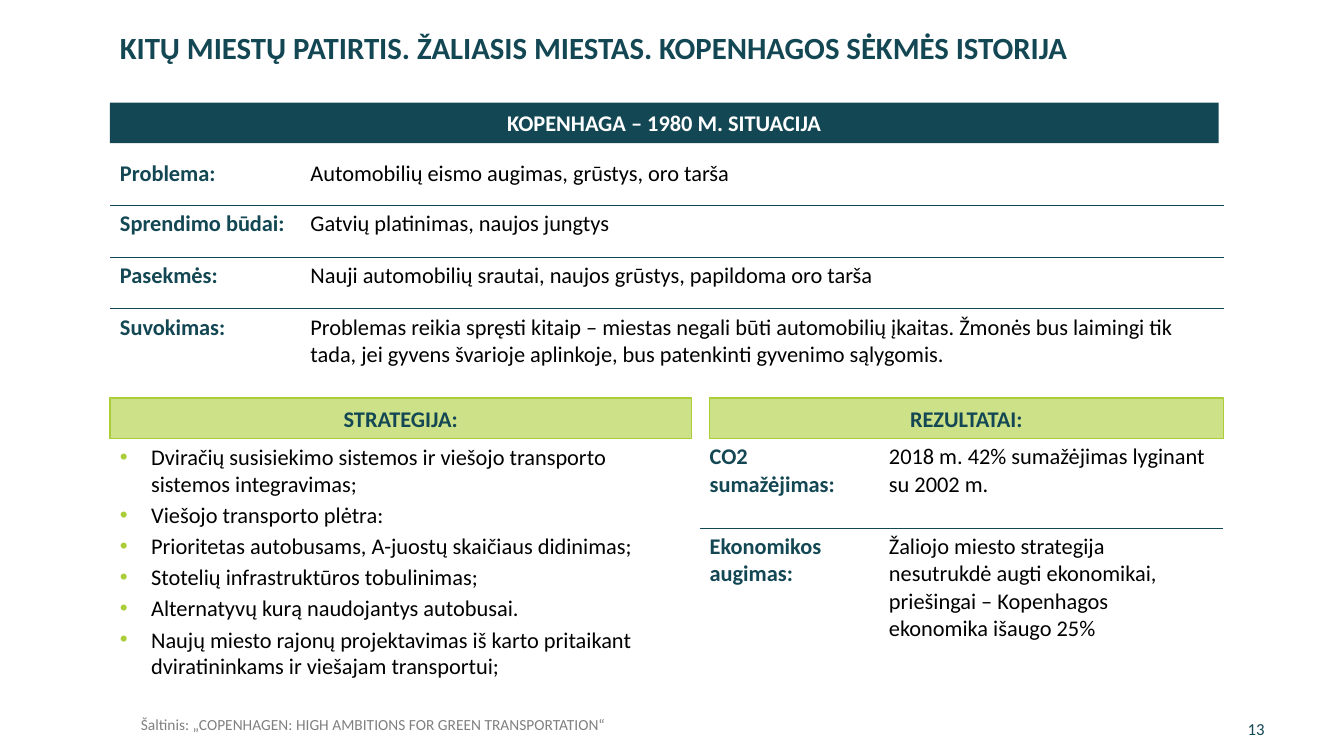
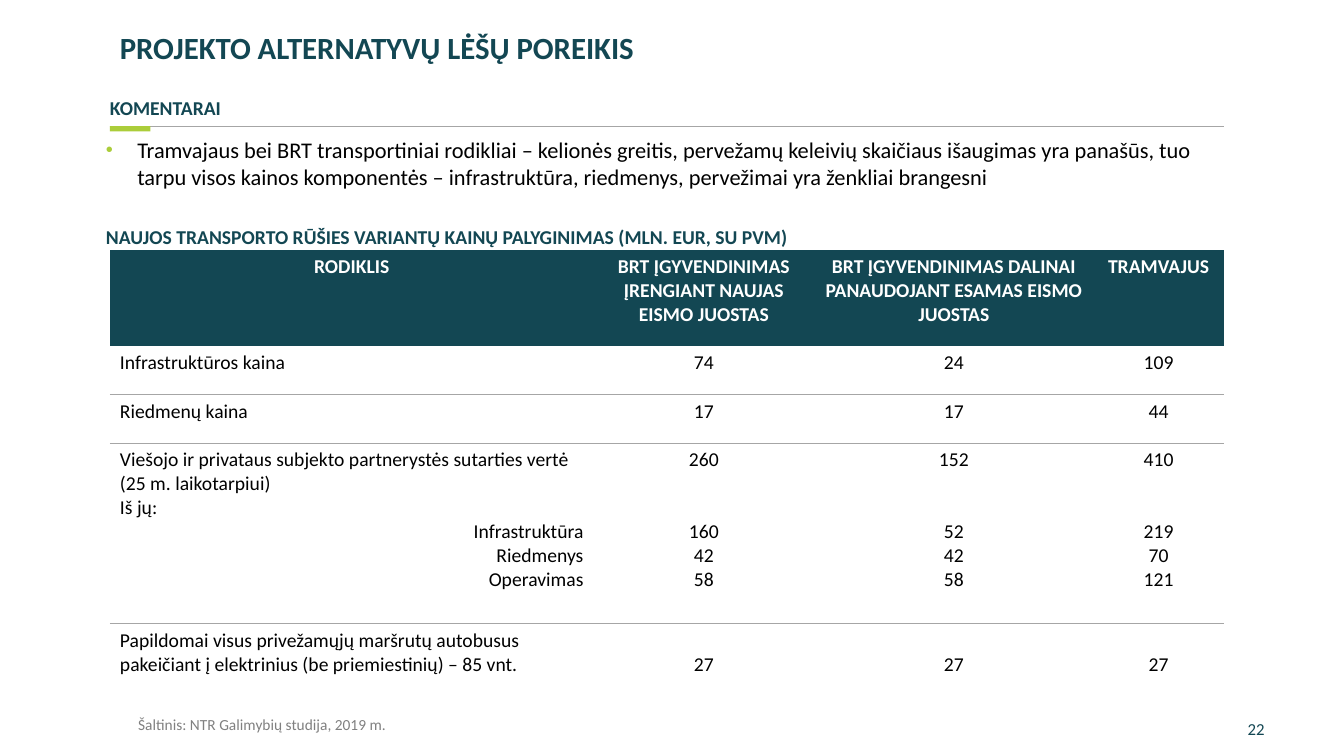
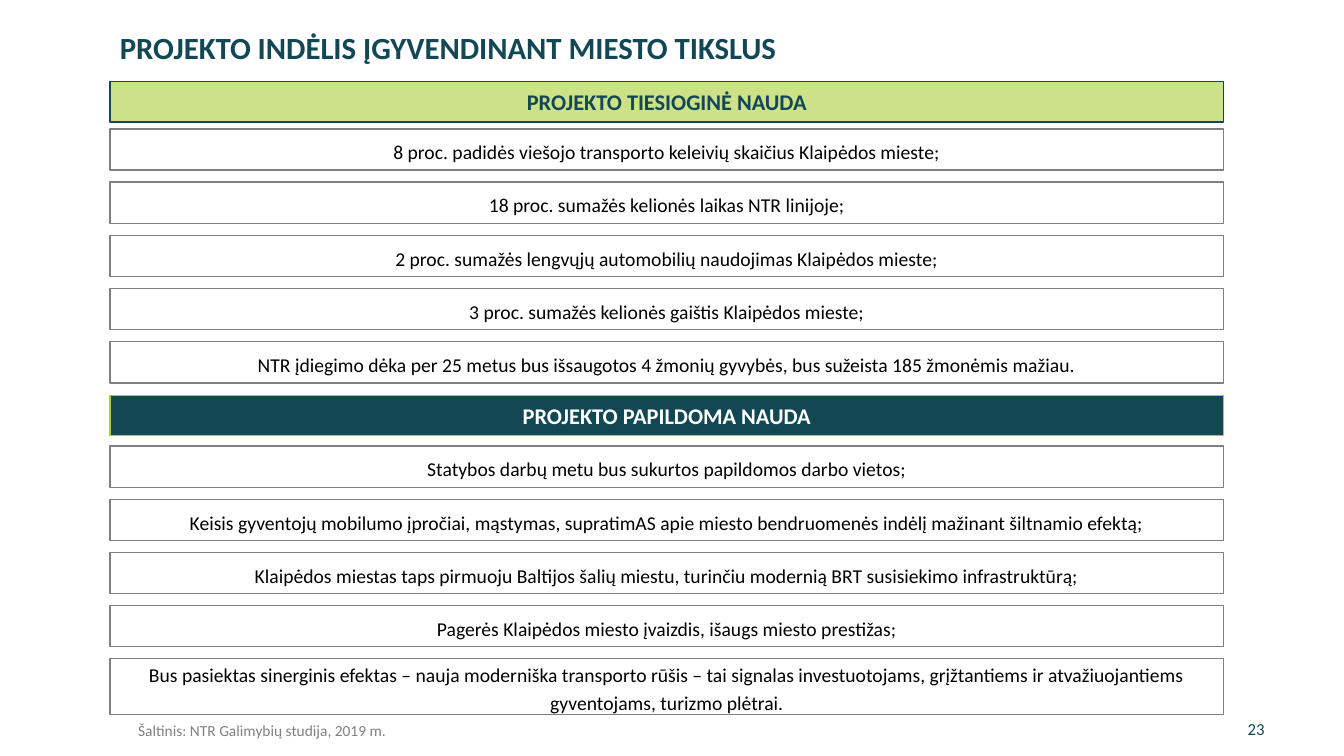
import dataclasses

import lxml.etree
import pptx
import pptx.dml.color
import pptx.enum.shapes
import pptx.enum.text
import pptx.oxml.ns
import pptx.util

Cm = pptx.util.Cm
Pt = pptx.util.Pt
qn = pptx.oxml.ns.qn
RGB = pptx.dml.color.RGBColor.from_string
ALIGN = pptx.enum.text.PP_ALIGN
ANCHOR = pptx.enum.text.MSO_ANCHOR


@dataclasses.dataclass(frozen=True)
class Theme:
    font: str = "Calibri"
    teal: str = "134753"
    lime: str = "ABCD3A"
    pale: str = "CDE189"
    grey: str = "808080"
    rule: str = "A6A6A6"
    white: str = "FFFFFF"
    black: str = "000000"
    title: int = 22
    body: int = 16
    small: int = 14
    number: int = 12
    source: int = 11


theme = Theme()
LEFT = 2.77
WIDTH = 28.07
NO_STYLE = "{2D5ABB26-0587-4C30-8999-92F81FD0307C}"


def write(frame, lines, size, color, bold=False, align=ALIGN.LEFT, spacing=None, before=0, bullet=0):
    frame.word_wrap = True
    for index, line in enumerate(lines):
        para = frame.paragraphs[0] if index == 0 else frame.add_paragraph()
        if bullet:
            properties = para._p.get_or_add_pPr()
            properties.set("marL", str(Cm(0.79)))
            properties.set("indent", str(-Cm(0.79)))
            tint = lxml.etree.SubElement(properties, qn("a:buClr"))
            lxml.etree.SubElement(tint, qn("a:srgbClr")).set("val", theme.lime)
            lxml.etree.SubElement(properties, qn("a:buSzPct")).set("val", str(bullet * 1000))
            lxml.etree.SubElement(properties, qn("a:buFont")).set("typeface", "Arial")
            lxml.etree.SubElement(properties, qn("a:buChar")).set("char", "•")
        para.alignment = align
        if spacing:
            para.line_spacing = spacing
        if index and before:
            para.space_before = Pt(before)
        span = para.add_run()
        span.text = line
        span.font.name = theme.font
        span.font.size = Pt(size)
        span.font.bold = bold
        span.font.color.rgb = RGB(color)


def add_box(page, left, top, width, height, fill=None, line=None, margin=None, anchor=ANCHOR.TOP):
    area = [Cm(length) for length in (left, top, width, height)]
    if fill:
        box = page.shapes.add_shape(pptx.enum.shapes.MSO_SHAPE.RECTANGLE, *area)
        box.shadow.inherit = False
        box.fill.solid()
        box.fill.fore_color.rgb = RGB(fill)
        if line:
            box.line.color.rgb = RGB(line)
            box.line.width = Pt(1)
        else:
            box.line.fill.background()
    else:
        box = page.shapes.add_textbox(*area)
    frame = box.text_frame
    frame.vertical_anchor = anchor
    if margin is not None:
        frame.margin_left = frame.margin_right = Cm(margin)
        frame.margin_top = frame.margin_bottom = Cm(margin)
    return frame


deck = pptx.Presentation()
deck.slide_width = Cm(33.87)
deck.slide_height = Cm(19.05)

study = "Šaltinis: NTR Galimybių studija, 2019 m."
outline = [
    ("13", "KITŲ MIESTŲ PATIRTIS. ŽALIASIS MIESTAS. KOPENHAGOS SĖKMĖS ISTORIJA",
     "Šaltinis: „COPENHAGEN: HIGH AMBITIONS FOR GREEN TRANSPORTATION“", 3.3, 17.96),
    ("22", "PROJEKTO ALTERNATYVŲ LĖŠŲ POREIKIS", study, 3.23, 17.96),
    ("23", "PROJEKTO INDĖLIS ĮGYVENDINANT MIESTO TIKSLUS", study, 3.23, 18.11),
]
pages = []
for number, title, source, source_left, source_top in outline:
    page = deck.slides.add_slide(deck.slide_layouts[6])
    pages.append(page)
    write(add_box(page, LEFT, 0.71, 28.78, 1.42), [title], theme.title, theme.teal, True, spacing=0.9)
    write(add_box(page, source_left, source_top, 27.41, 0.76), [source], theme.source, theme.grey, spacing=0.9)
    write(add_box(page, 31.19, 17.86, 1.6, 1.02, anchor=ANCHOR.MIDDLE), [number], theme.number, theme.teal)
copenhagen, costs, benefits = pages

bands = [
    (copenhagen, LEFT, 2.59, 27.94, "KOPENHAGA – 1980 M. SITUACIJA", theme.teal, None, theme.white),
    (copenhagen, LEFT, 10.03, 14.66, "STRATEGIJA:", theme.pale, theme.lime, theme.teal),
    (copenhagen, 17.88, 10.03, 12.95, "REZULTATAI:", theme.pale, theme.lime, theme.teal),
    (benefits, LEFT, 2.06, WIDTH, "PROJEKTO TIESIOGINĖ NAUDA", theme.pale, theme.teal, theme.teal),
    (benefits, LEFT, 9.96, WIDTH, "PROJEKTO PAPILDOMA NAUDA", theme.teal, theme.lime, theme.white),
]
for page, left, top, width, label, fill, line, color in bands:
    frame = add_box(page, left, top, width, 1.02, fill, line, anchor=ANCHOR.MIDDLE)
    write(frame, [label], theme.body, color, True, ALIGN.CENTER)

situation = [
    ["Problema:", "Automobilių eismo augimas, grūstys, oro tarša"],
    ["Sprendimo būdai:", "Gatvių platinimas, naujos jungtys"],
    ["Pasekmės:", "Nauji automobilių srautai, naujos grūstys, papildoma oro tarša"],
    ["Suvokimas:", "Problemas reikia spręsti kitaip – miestas negali būti automobilių įkaitas. "
     "Žmonės bus laimingi tik tada, jei gyvens švarioje aplinkoje, bus patenkinti gyvenimo sąlygomis."],
]
results = [
    ["CO2 sumažėjimas:", "2018 m. 42% sumažėjimas lyginant su 2002 m."],
    ["Ekonomikos augimas:", "Žaliojo miesto strategija nesutrukdė augti ekonomikai, priešingai – "
     "Kopenhagos ekonomika išaugo 25%"],
]
prices = [
    ["RODIKLIS", "BRT ĮGYVENDINIMAS ĮRENGIANT NAUJAS EISMO JUOSTAS",
     "BRT ĮGYVENDINIMAS DALINAI PANAUDOJANT ESAMAS EISMO JUOSTAS", "TRAMVAJUS"],
    ["Infrastruktūros kaina", "74", "24", "109"],
    ["Riedmenų kaina", "17", "17", "44"],
    ["Viešojo ir privataus subjekto partnerystės sutarties vertė (25 m. laikotarpiui)\n"
     "Iš jų:\nInfrastruktūra\nRiedmenys\nOperavimas",
     "260\n160\n42\n58", "152\n52\n42\n58", "410\n219\n70\n121"],
    ["Papildomai visus privežamųjų maršrutų autobusus pakeičiant į elektrinius (be priemiestinių) – 85 vnt.",
     "27", "27", "27"],
]
table_plans = [
    (copenhagen, LEFT, 3.91, [4.8, 23.27], [1.27, 1.3, 1.3, 2.03], situation, theme.body, theme.teal, False),
    (copenhagen, 17.63, 11.05, [4.52, 8.66], [2.26, 4.17], results, theme.body, theme.teal, False),
    (costs, LEFT, 6.3, [12.19, 5.56, 7.04, 3.28], [2.41, 1.23, 1.23, 4.55, 1.7],
     prices, theme.small, theme.rule, True),
]
for page, left, top, widths, heights, rows, size, rule, headed in table_plans:
    table = page.shapes.add_table(len(rows), len(widths), Cm(left), Cm(top),
                                  Cm(sum(widths)), Cm(sum(heights))).table
    table.first_row = headed
    table.horz_banding = False
    table._tbl.tblPr.find(qn("a:tableStyleId")).text = NO_STYLE
    for column, width in zip(table.columns, widths):
        column.width = Cm(width)
    for row_index, row in enumerate(rows):
        table.rows[row_index].height = Cm(heights[row_index])
        header = headed and row_index == 0
        for column_index, text in enumerate(row):
            cell = table.cell(row_index, column_index)
            label = not headed and column_index == 0
            color = theme.white if header else theme.teal if label else theme.black
            centred = header or (headed and column_index > 0)
            write(cell.text_frame, text.split("\n"), size, color, header or label,
                  ALIGN.CENTER if centred else ALIGN.LEFT)
            sides = []
            if row_index > int(headed):
                sides.append("a:lnT")
            if not header and row_index < len(rows) - 1:
                sides.append("a:lnB")
            for side in sides:
                edge = lxml.etree.SubElement(cell._tc.get_or_add_tcPr(), qn(side))
                edge.set("w", str(Pt(1)))
                paint = lxml.etree.SubElement(edge, qn("a:solidFill"))
                lxml.etree.SubElement(paint, qn("a:srgbClr")).set("val", rule)
            if header:
                cell.fill.solid()
                cell.fill.fore_color.rgb = RGB(theme.teal)
            else:
                cell.fill.background()

for para in table.cell(3, 0).text_frame.paragraphs[2:]:
    para.alignment = ALIGN.RIGHT
for column_index in range(1, 4):
    table.cell(3, column_index).text_frame.paragraphs[1].space_before = Pt(34)
    table.cell(4, column_index).margin_top = Cm(0.72)

strategy = [
    "Dviračių susisiekimo sistemos ir viešojo transporto sistemos integravimas;",
    "Viešojo transporto plėtra:",
    "Prioritetas autobusams, A-juostų skaičiaus didinimas;",
    "Stotelių infrastruktūros tobulinimas;",
    "Alternatyvų kurą naudojantys autobusai.",
    "Naujų miesto rajonų projektavimas iš karto pritaikant dviratininkams ir viešajam transportui;",
]
write(add_box(copenhagen, LEFT, 11.05, 14.86, 6.27), strategy, theme.body, theme.black, before=3, bullet=100)

comment = ("Tramvajaus bei BRT transportiniai rodikliai – kelionės greitis, pervežamų keleivių skaičiaus "
           "išaugimas yra panašūs, tuo tarpu visos kainos komponentės – infrastruktūra, riedmenys, "
           "pervežimai yra ženkliai brangesni")
write(add_box(costs, 2.67, 3.43, 28.14, 2.08, margin=0), [comment], theme.body, theme.black, bullet=90)
write(add_box(costs, 2.67, 5.66, 21.39, 0.76, margin=0),
      ["NAUJOS TRANSPORTO RŪŠIES VARIANTŲ KAINŲ PALYGINIMAS (MLN. EUR, SU PVM)"],
      theme.small, theme.teal, True)
write(add_box(costs, LEFT, 2.34, 8.89, 0.76, margin=0, anchor=ANCHOR.MIDDLE),
      ["KOMENTARAI"], theme.small, theme.teal, True)
divider = costs.shapes.add_connector(pptx.enum.shapes.MSO_CONNECTOR.STRAIGHT,
                                     Cm(LEFT), Cm(3.18), Cm(LEFT + WIDTH), Cm(3.18))
divider.line.color.rgb = RGB(theme.rule)
divider.line.width = Pt(1)
lxml.etree.SubElement(divider._element.spPr, qn("a:effectLst"))
add_box(costs, LEFT, 3.18, 1.02, 0.13, theme.lime)

direct = [
    "8 proc. padidės viešojo transporto keleivių skaičius Klaipėdos mieste;",
    "18 proc. sumažės kelionės laikas NTR linijoje;",
    "2 proc. sumažės lengvųjų automobilių naudojimas Klaipėdos mieste;",
    "3 proc. sumažės kelionės gaištis Klaipėdos mieste;",
    "NTR įdiegimo dėka per 25 metus bus išsaugotos 4 žmonių gyvybės, bus sužeista 185 žmonėmis mažiau.",
]
additional = [
    "Statybos darbų metu bus sukurtos papildomos darbo vietos;",
    "Keisis gyventojų mobilumo įpročiai, mąstymas, supratimAS apie miesto bendruomenės indėlį "
    "mažinant šiltnamio efektą;",
    "Klaipėdos miestas taps pirmuoju Baltijos šalių miestu, turinčiu modernią BRT susisiekimo infrastruktūrą;",
    "Pagerės Klaipėdos miesto įvaizdis, išaugs miesto prestižas;",
    "Bus pasiektas sinerginis efektas – nauja moderniška transporto rūšis – tai signalas investuotojams, "
    "grįžtantiems ir atvažiuojantiems gyventojams, turizmo plėtrai.",
]
for first_top, items, last_height in ((3.25, direct, 1.04), (11.24, additional, 1.4)):
    for index, item in enumerate(items):
        height = last_height if item == items[-1] else 1.04
        frame = add_box(benefits, LEFT, first_top + index * 1.34, WIDTH, height,
                        theme.white, theme.grey, 0, ANCHOR.MIDDLE)
        write(frame, [item], theme.small, theme.black, align=ALIGN.CENTER, spacing=1.2)

deck.save("out.pptx")
